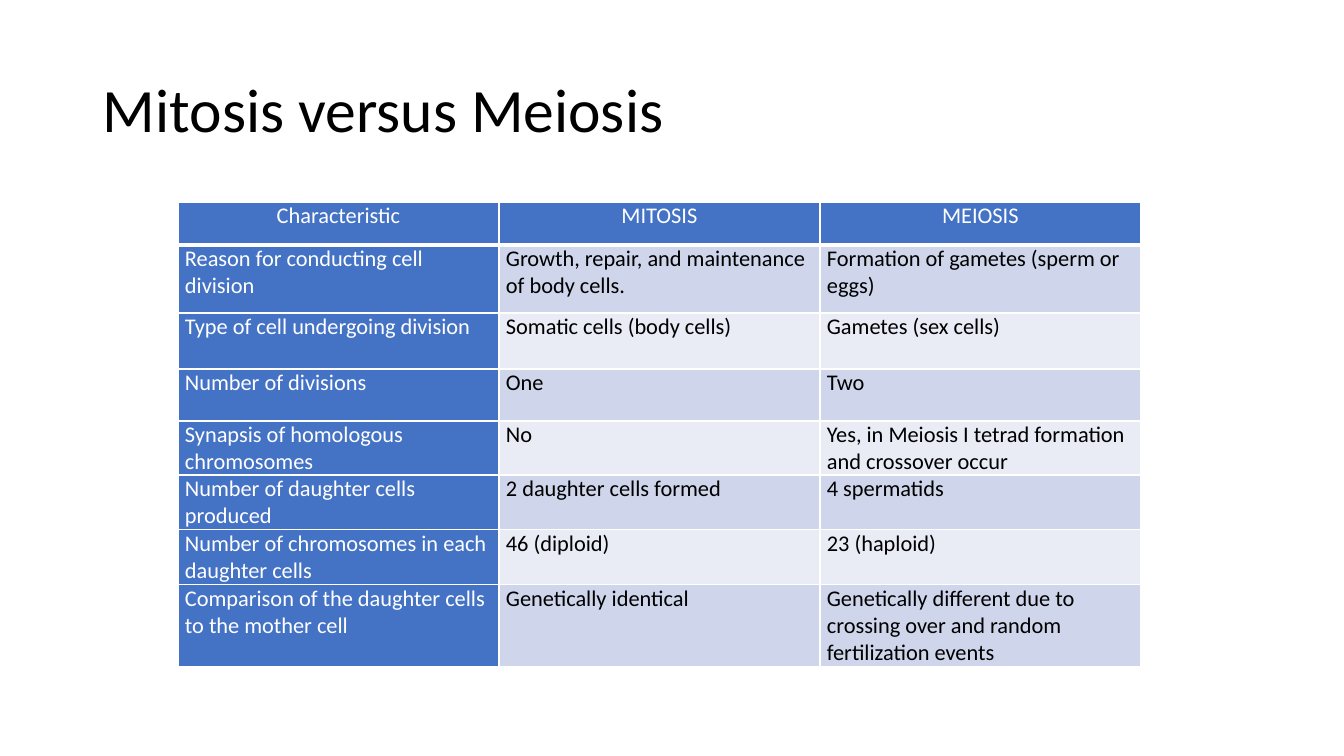
from dataclasses import dataclass

from lxml import etree
from pptx import Presentation
from pptx.dml.color import RGBColor
from pptx.enum.text import MSO_ANCHOR, PP_ALIGN
from pptx.oxml.ns import qn
from pptx.util import Pt

LEFT, CENTER = PP_ALIGN.LEFT, PP_ALIGN.CENTER
MIDDLE, TOP = MSO_ANCHOR.MIDDLE, MSO_ANCHOR.TOP

# Content
TITLE = "Mitosis versus Meiosis"
ROWS = [
    ("Characteristic", "MITOSIS", "MEIOSIS"),
    ("Reason for conducting cell division",
     "Growth, repair, and maintenance of body cells.",
     "Formation of gametes (sperm or eggs)"),
    ("Type of cell undergoing division",
     "Somatic cells (body cells)", "Gametes (sex cells)"),
    ("Number of divisions", "One", "Two"),
    ("Synapsis of homologous chromosomes", "No",
     "Yes, in Meiosis I tetrad formation and crossover occur"),
    ("Number of daughter cells produced",
     "2 daughter cells formed", "4 spermatids"),
    ("Number of chromosomes in each daughter cells",
     "46 (diploid)", "23 (haploid)"),
    ("Comparison of the daughter cells to the mother cell",
     "Genetically identical",
     "Genetically different due to crossing over and random "
     "fertilization events"),
]

# Layout in px
SLIDE_SIZE = (1344, 756)
TITLE_BOX = (93, 40, 1159, 146)
TABLE_LEFT, TABLE_TOP, COLUMN_WIDTH = 178, 202, 321
ROW_HEIGHTS = (43, 68, 56, 52, 54, 55, 55, 82)
CELL_MARGIN = 7


@dataclass(frozen=True)
class Theme:
    font: str = "Calibri"
    title_size: int = 44
    table_size: int = 16
    ink: str = "000000"
    white: str = "FFFFFF"
    heading: str = "4472C4"
    bands: tuple = ("E9EBF5", "CFD5EA")
    rule: int = 1
    heading_rule: int = 3


THEME = Theme()


def px(length):
    return round(length * 914400 / 100.8)


def write(frame, text, *, size, color, align=LEFT, spacing=1.0):
    frame.word_wrap = True
    paragraph = frame.paragraphs[0]
    paragraph.alignment = align
    paragraph.line_spacing = spacing
    run = paragraph.add_run()
    run.text = text
    run.font.name = THEME.font
    run.font.size = Pt(size)
    run.font.color.rgb = RGBColor.from_string(color)


def set_borders(cell, bottom):
    properties = cell._tc.get_or_add_tcPr()
    widths = {"L": THEME.rule, "R": THEME.rule, "T": THEME.rule, "B": bottom}
    # Border lines come before the fill in the cell properties
    for index, (side, width) in enumerate(widths.items()):
        line = etree.Element(qn(f"a:ln{side}"), w=str(Pt(width)))
        fill = etree.SubElement(line, qn("a:solidFill"))
        etree.SubElement(fill, qn("a:srgbClr"), val=THEME.white)
        properties.insert(index, line)


def add_title(slide):
    box = slide.shapes.add_textbox(*map(px, TITLE_BOX))
    box.text_frame.vertical_anchor = MIDDLE
    write(box.text_frame, TITLE, size=THEME.title_size, color=THEME.ink,
          spacing=0.9)


def add_comparison(slide):
    column_count = len(ROWS[0])
    table = slide.shapes.add_table(
        len(ROWS), column_count, px(TABLE_LEFT), px(TABLE_TOP),
        px(COLUMN_WIDTH * column_count), px(sum(ROW_HEIGHTS))).table
    table.first_col = True
    for column in table.columns:
        column.width = px(COLUMN_WIDTH)
    for row, height in zip(table.rows, ROW_HEIGHTS):
        row.height = px(height)

    for row_index, texts in enumerate(ROWS):
        for column_index, text in enumerate(texts):
            cell = table.cell(row_index, column_index)
            is_header = row_index == 0
            is_heading = is_header or column_index == 0
            fill = THEME.heading if is_heading else THEME.bands[row_index % 2]
            cell.fill.solid()
            cell.fill.fore_color.rgb = RGBColor.from_string(fill)
            cell.vertical_anchor = TOP
            cell.margin_left = cell.margin_right = px(CELL_MARGIN)
            cell.margin_top = cell.margin_bottom = 0
            write(cell.text_frame, text, size=THEME.table_size,
                  color=THEME.white if is_heading else THEME.ink,
                  align=CENTER if is_header else LEFT)
            set_borders(cell, THEME.heading_rule if is_header else THEME.rule)


def main():
    presentation = Presentation()
    presentation.slide_width, presentation.slide_height = map(px, SLIDE_SIZE)
    slide = presentation.slides.add_slide(presentation.slide_layouts[6])
    add_title(slide)
    add_comparison(slide)
    presentation.save("out.pptx")


if __name__ == "__main__":
    main()
